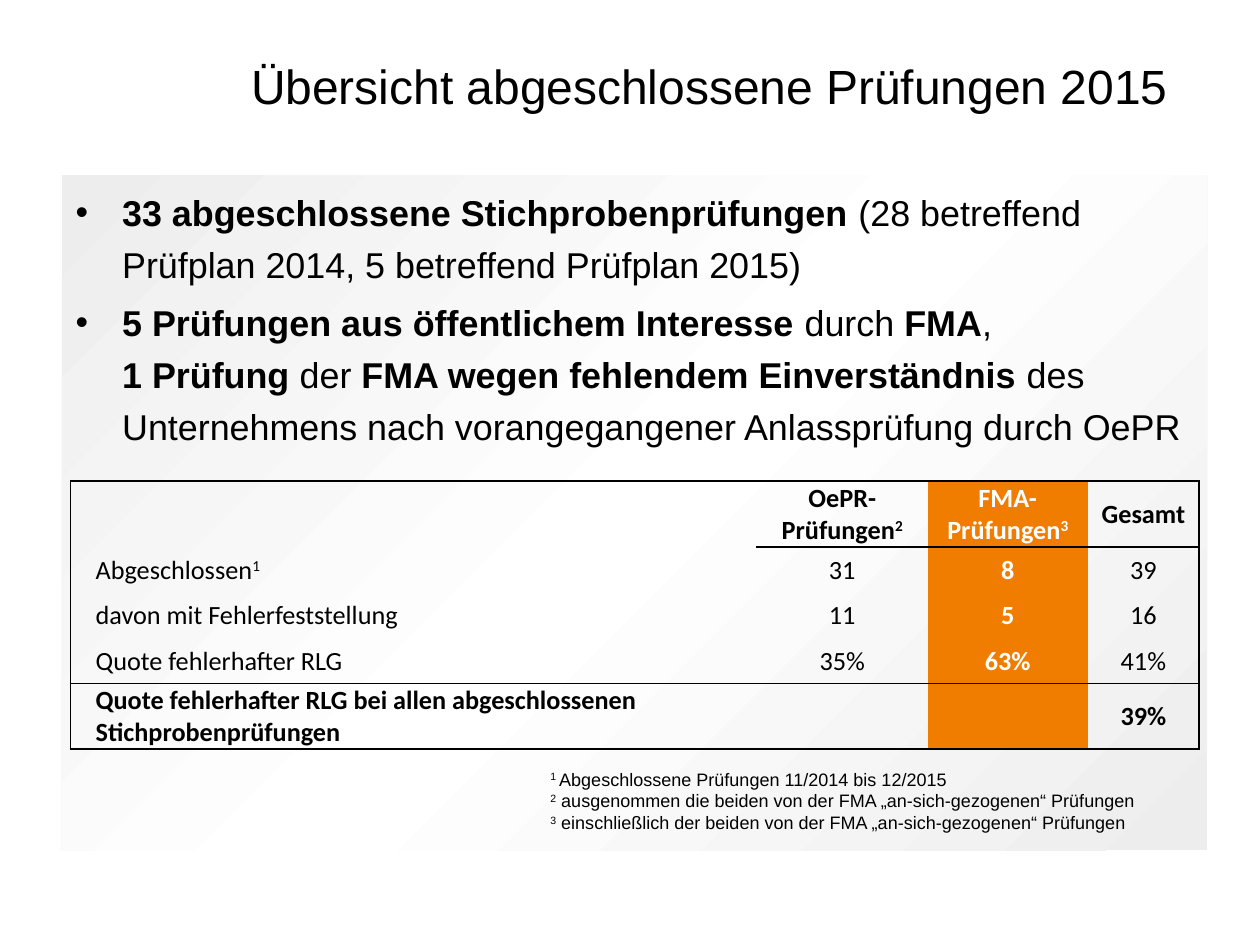
from copy import deepcopy

from lxml import etree
from pptx import Presentation
from pptx import util as u
from pptx.dml.color import RGBColor
from pptx.enum import shapes, text
from pptx.oxml import ns

ALIGN = text.PP_ALIGN
ANCHOR = text.MSO_ANCHOR
BLACK, WHITE, GREY, ORANGE = "000000", "FFFFFF", "EDEDED", "F07D00"

BULLETS = [
    "*33 abgeschlossene Stichprobenprüfungen *(28 betreffend Prüfplan 2014, "
    "5 betreffend Prüfplan 2015)",
    "*5 Prüfungen aus öffentlichem Interesse *durch *FMA*, \n*1 Prüfung *der"
    "* FMA wegen fehlendem Einverständnis *des Unternehmens nach "
    "vorangegangener Anlassprüfung durch OePR",
]
AUDIT_ROWS = [
    ["", "*OePR-Prüfungen^2^*", "*FMA-Prüfungen^3^*", "*Gesamt*"],
    ["Abgeschlossen^1^", "31", "*8*", "39"],
    ["davon mit Fehlerfeststellung", "11", "*5*", "16"],
    ["Quote fehlerhafter RLG", "35%", "*63%*", "41%"],
    ["*Quote fehlerhafter RLG bei allen abgeschlossenen Stichprobenprüfungen*",
     "", "", "*39%*"],
]
FOOTNOTES = [
    "^1 ^Abgeschlossene Prüfungen 11/2014 bis 12/2015",
    "^2^ ausgenommen die beiden von der FMA „an-sich-gezogenen“ Prüfungen",
    "^3^ einschließlich der beiden von der FMA „an-sich-gezogenen“ Prüfungen",
]


def rgb(value):
    return RGBColor.from_string(value)


class SlideBuilder:
    body_font = "Arial"
    table_font = "Calibri"

    def __init__(self, slide):
        self.slide = slide

    def add_spans(self, para, marked, size, font, color=BLACK, align=ALIGN.LEFT):
        para.alignment = align
        for bold, part in enumerate(marked.split("*")):
            for raised, piece in enumerate(part.split("^")):
                for number, line in enumerate(piece.split("\n")):
                    if number:
                        para.add_line_break()
                    if line:
                        span = para.add_run()
                        span.text = line
                        span.font.size = u.Pt(size)
                        span.font.name = font
                        span.font.bold = bool(bold % 2)
                        span.font.color.rgb = rgb(color)
                        if raised % 2:
                            span.font._element.set("baseline", "30000")

    def fill_frame(self, frame, lines, size, align=ALIGN.LEFT, anchor=ANCHOR.TOP):
        frame.word_wrap = True
        frame.vertical_anchor = anchor
        frame.margin_left = frame.margin_right = u.Pt(8)
        frame.margin_top = frame.margin_bottom = u.Pt(4)
        for number, line in enumerate(lines):
            para = frame.add_paragraph() if number else frame.paragraphs[0]
            self.add_spans(para, line, size, self.body_font, align=align)

    def text_box(self, place, lines, size, **style):
        box = self.slide.shapes.add_textbox(*map(u.Pt, place))
        self.fill_frame(box.text_frame, lines, size, **style)

    def bullet_panel(self, place, lines, size):
        panel = self.slide.shapes.add_shape(
            shapes.MSO_SHAPE.RECTANGLE, *map(u.Pt, place))
        panel.shadow.inherit = False
        panel.line.fill.background()
        panel.fill.gradient()
        panel.fill.gradient_angle = 315
        stop_list = panel._element.spPr.find(".//" + ns.qn("a:gsLst"))
        stop_list.append(deepcopy(stop_list[-1]))
        for stop, color, position in zip(
                panel.fill.gradient_stops, (GREY, WHITE, GREY), (0, 0.5, 1)):
            stop.color.rgb = rgb(color)
            stop.position = position
        self.fill_frame(panel.text_frame, lines, size)
        for para in panel.text_frame.paragraphs:
            para.line_spacing = 1.2
            para.space_before = u.Pt(4)
            props = para._p.get_or_add_pPr()
            props.set("marL", str(u.Pt(26.5)))
            props.set("indent", str(u.Pt(-26.5)))
            etree.SubElement(props, ns.qn("a:buFont"), typeface=self.body_font)
            etree.SubElement(props, ns.qn("a:buChar"), char="•")

    def borders(self, cell, widths):
        props = cell._tc.get_or_add_tcPr()
        for side in "LRTB":
            width = widths.get(side, 0)
            line = etree.SubElement(props, ns.qn("a:ln" + side), w=str(u.Pt(width)))
            if width:
                solid = etree.SubElement(line, ns.qn("a:solidFill"))
                etree.SubElement(solid, ns.qn("a:srgbClr"), val=BLACK)
            else:
                etree.SubElement(line, ns.qn("a:noFill"))

    def table(self, place, rows, col_widths, row_heights, size, marked_col):
        last_row, last_col = len(rows) - 1, len(col_widths) - 1
        grid = self.slide.shapes.add_table(
            len(rows), len(col_widths), *map(u.Pt, place)).table
        grid.first_row = grid.horz_banding = False
        for column, width in zip(grid.columns, col_widths):
            column.width = u.Pt(width)
        for row, height in zip(grid.rows, row_heights):
            row.height = u.Pt(height)
        for r, row in enumerate(rows):
            for c, marked in enumerate(row):
                cell = grid.cell(r, c)
                rules = {0: 1, last_row: 0.5, last_row + 1: 1}
                if c:
                    rules[1] = 1
                self.borders(cell, {
                    "L": int(c == 0), "R": int(c == last_col),
                    "T": rules.get(r, 0), "B": rules.get(r + 1, 0)})
                highlighted = c == marked_col
                if highlighted:
                    cell.fill.solid()
                    cell.fill.fore_color.rgb = rgb(ORANGE)
                else:
                    cell.fill.background()
                cell.vertical_anchor = ANCHOR.MIDDLE
                cell.margin_left = cell.margin_right = cell.margin_top = u.Pt(0.7)
                cell.margin_bottom = 0
                para = cell.text_frame.paragraphs[0]
                self.add_spans(para, marked, size, self.table_font,
                               WHITE if highlighted else BLACK,
                               ALIGN.CENTER if c else ALIGN.LEFT)
                if c == 0:
                    para._p.get_or_add_pPr().set("marL", str(u.Pt(13.7)))


def main():
    deck = Presentation()
    deck.slide_width, deck.slide_height = u.Pt(720), u.Pt(540)
    page = SlideBuilder(deck.slides.add_slide(deck.slide_layouts[6]))
    page.text_box((117.4, 28, 557.3, 41),
                  ["Übersicht abgeschlossene Prüfungen 2015"], 27.4,
                  align=ALIGN.RIGHT, anchor=ANCHOR.MIDDLE)
    page.bullet_panel((35.3, 100, 654.5, 386), BULLETS, 20.5)
    page.table((40.3, 275, 645, 153.4), AUDIT_ROWS, (392, 98, 91.2, 63.8),
               (37.5, 26, 26, 26, 37.5), 15, marked_col=2)
    page.text_box((306.5, 435, 373.7, 44.6), FOOTNOTES, 10.3)
    deck.save("out.pptx")


if __name__ == "__main__":
    main()
